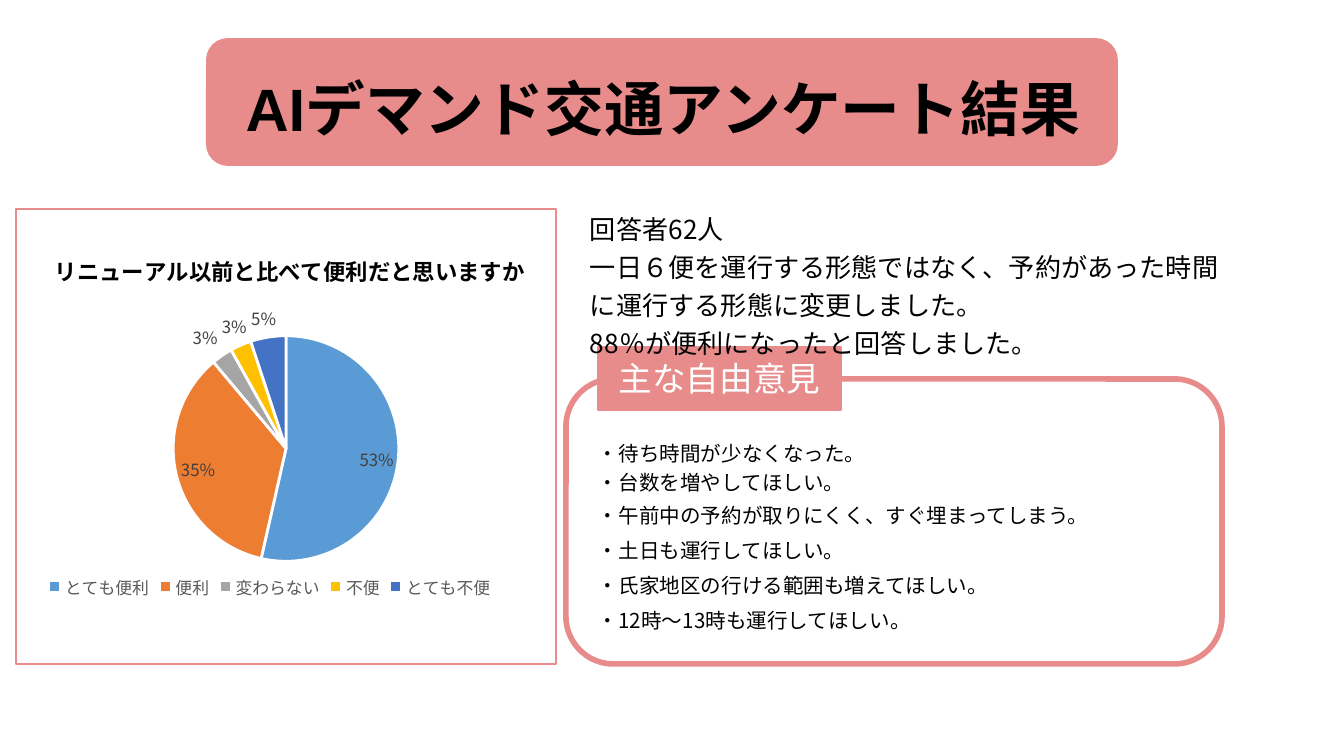
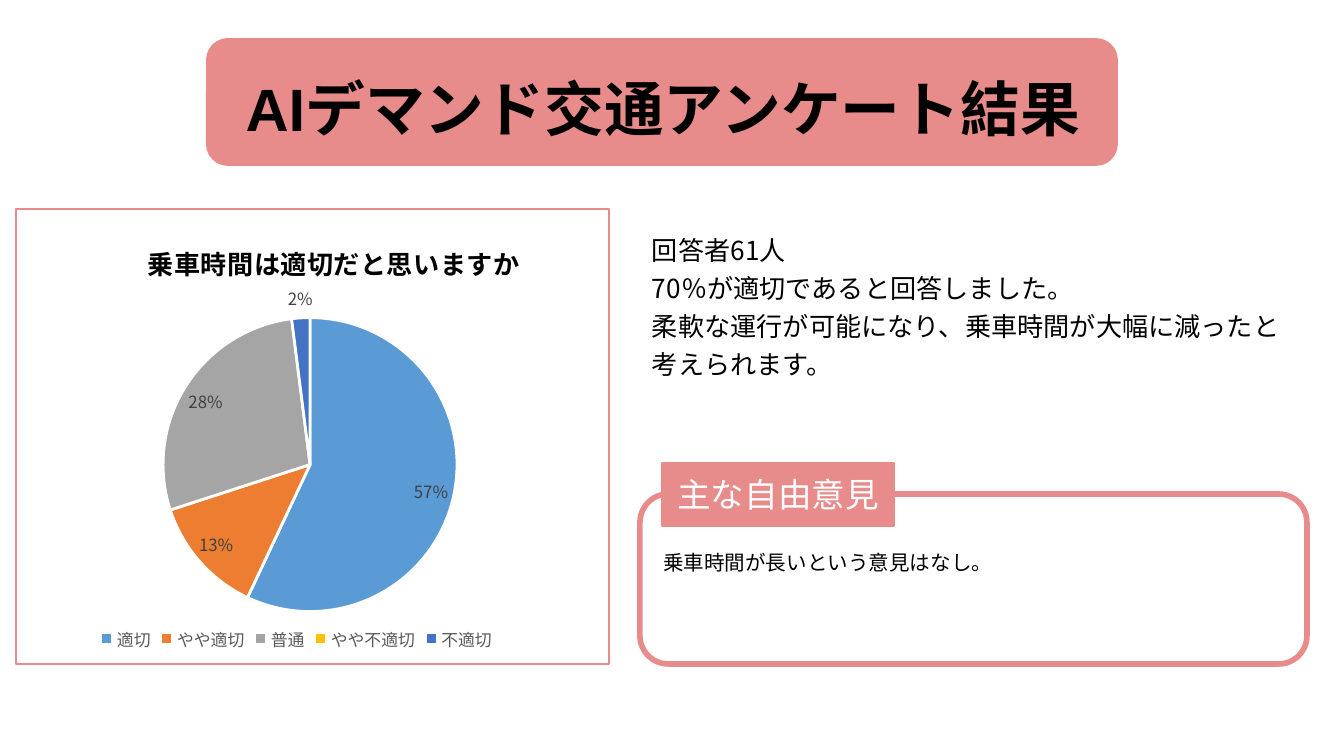
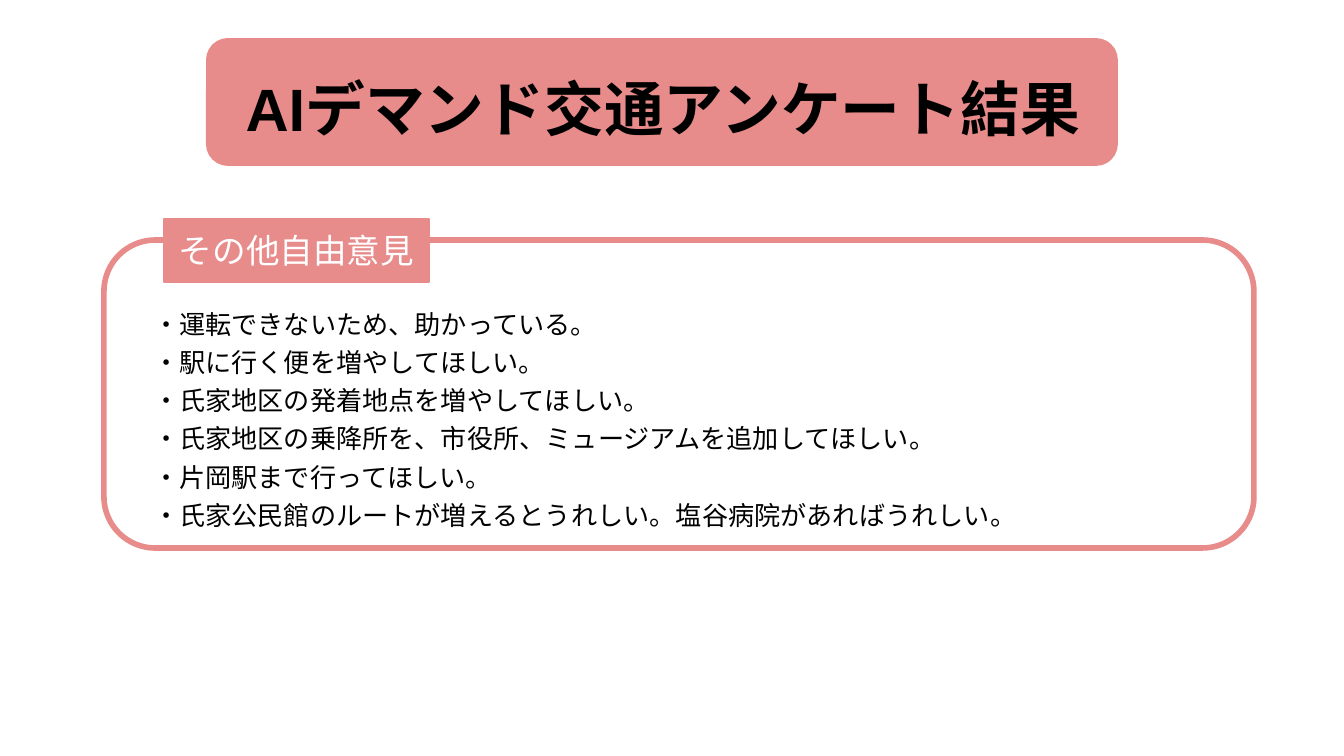
"""Builds three slides that report the results of a survey on AI demand transport."""
from lxml import etree
from pptx import Presentation
from pptx.chart.data import CategoryChartData
from pptx.dml.color import RGBColor
from pptx.enum.chart import XL_CHART_TYPE, XL_LABEL_POSITION, XL_LEGEND_POSITION
from pptx.enum.shapes import MSO_SHAPE
from pptx.enum.text import MSO_ANCHOR, PP_ALIGN
from pptx.oxml.ns import qn
from pptx.util import Pt

PIE = XL_CHART_TYPE.PIE
BEST_FIT = XL_LABEL_POSITION.BEST_FIT
BOTTOM = XL_LEGEND_POSITION.BOTTOM
RECT, ROUNDED = MSO_SHAPE.RECTANGLE, MSO_SHAPE.ROUNDED_RECTANGLE
MIDDLE, CENTER = MSO_ANCHOR.MIDDLE, PP_ALIGN.CENTER

EMU_PER_PX = 914400 / 134.4
SLIDE_W, SLIDE_H = 1344, 756
BODY_FONT, TITLE_FONT = "Noto Sans CJK JP", "Arial"
PINK, BLACK, WHITE, LEGEND_GREY, LABEL_GREY = "E78B8B", "000000", "FFFFFF", "595959", "404040"
SLICE_COLORS = ["5B9BD5", "ED7D31", "A5A5A5", "FFC000", "4472C4"]
NO_GRID_STYLE = "{2D5ABB26-0587-4C30-8999-92F81FD0307C}"

TITLE = "AIデマンド交通アンケート結果"
BAND_AT = (207, 39, 910, 126)
TITLE_AT = (58, 34, 1210, 148)

SLIDES = [
    {
        "opinions": {
            "at": (598, 437, 632, 239), "size": 11, "heights": [35] * 6,
            "rows": [
                ["・待ち時間が少なくなった。", "・台数を増やしてほしい。"],
                ["・午前中の予約が取りにくく、すぐ埋まってしまう。"],
                ["・土日も運行してほしい。"],
                ["・氏家地区の行ける範囲も増えてほしい。"],
                ["・12時～13時も運行してほしい。"],
                [],
            ],
        },
        "box": (566, 379, 656, 285),
        "label": ("主な自由意見", (598, 347, 243, 63)),
        "chart_frame": (16, 209, 540, 455),
        "summary": {
            "at": (590, 209, 632, 313), "size": 14, "heights": [10] * 6,
            "rows": [
                ["回答者62人",
                 "一日６便を運行する形態ではなく、予約があった時間に運行する形態に変更しました。",
                 "88％が便利になったと回答しました。"],
                [], [], [], [], [],
            ],
        },
        "chart": {
            "at": (-50, 223, 672, 403),
            "question": "リニューアル以前と比べて便利だと思いますか", "size": 12,
            "answers": [("とても便利", 0.53), ("便利", 0.35), ("変わらない", 0.03),
                        ("不便", 0.03), ("とても不便", 0.05)],
            "title": (0.15, 0.06), "pie": (0.33, 0.28, 0.34, 0.56), "legend": (0.14, 0.86),
        },
    },
    {
        "opinions": {
            "at": (663, 546, 644, 231), "size": 11, "heights": [28] + [16] * 5,
            "rows": [["乗車時間が長いという意見はなし。"], [], [], [], [], []],
        },
        "box": (640, 494, 667, 170),
        "label": ("主な自由意見", (662, 463, 232, 63)),
        "chart_frame": (16, 209, 593, 455),
        "summary": {
            "at": (652, 230, 632, 313), "size": 14, "heights": [67, 21, 21, 21, 24, 13],
            "rows": [
                ["回答者61人",
                 "70％が適切であると回答しました。",
                 "柔軟な運行が可能になり、乗車時間が大幅に減ったと考えられます。"],
                [], [], [], [], [],
            ],
        },
        "chart": {
            "at": (20, 202, 586, 482),
            "question": "乗車時間は適切だと思いますか", "size": 14,
            "answers": [("適切", 0.57), ("やや適切", 0.13), ("普通", 0.28),
                        ("やや不適切", 0), ("不適切", 0.02)],
            "title": (0.21, 0.07), "pie": (0.24, 0.24, 0.51, 0.61), "legend": (0.13, 0.87),
        },
    },
    {
        "opinions": {
            "at": (153, 304, 931, 233), "size": 14, "heights": [9, 11, 35, 11, 31, 9, 9],
            "rows": [
                ["・運転できないため、助かっている。"],
                ["・駅に行く便を増やしてほしい。"],
                ["・氏家地区の発着地点を増やしてほしい。"],
                ["・氏家地区の乗降所を、市役所、ミュージアムを追加してほしい。"],
                ["・片岡駅まで行ってほしい。"],
                ["・氏家公民館のルートが増えるとうれしい。塩谷病院があればうれしい。"],
                [],
            ],
        },
        "box": (104, 240, 1150, 308),
        "label": ("その他自由意見", (164, 219, 265, 63)),
    },
]


def px(length):
    return round(length * EMU_PER_PX)


def place(at):
    return [px(length) for length in at]


def rgb(color):
    return RGBColor.from_string(color)


def style_font(font, size, color, name=BODY_FONT, bold=False):
    font.size, font.bold, font.name = Pt(size), bold, name
    font.color.rgb = rgb(color)


def add_text(paragraph, text, size, color, name=BODY_FONT, bold=False):
    run = paragraph.add_run()
    run.text = text
    style_font(run.font, size, color, name, bold)
    east_asian = etree.SubElement(run.font._element, qn("a:ea"))
    east_asian.set("typeface", BODY_FONT)


def add_outline(slide, preset, at, line_width, fill=None):
    shape = slide.shapes.add_shape(preset, *place(at))
    shape.shadow.inherit = False
    if fill:
        shape.fill.solid()
        shape.fill.fore_color.rgb = rgb(fill)
    else:
        shape.fill.background()
    shape.line.color.rgb = rgb(PINK)
    shape.line.width = Pt(line_width)
    return shape


def add_title(slide):
    band = add_outline(slide, ROUNDED, BAND_AT, 1, PINK)
    title = slide.shapes.title
    title._element.addprevious(band._element)
    title.left, title.top, title.width, title.height = place(TITLE_AT)
    title.text_frame.vertical_anchor = MIDDLE
    heading = title.text_frame.paragraphs[0]
    heading.alignment = CENTER
    add_text(heading, TITLE, 32, BLACK, TITLE_FONT, True)


def add_label(slide, text, at):
    frame = add_outline(slide, RECT, at, 1, PINK).text_frame
    frame.vertical_anchor = MIDDLE
    frame.paragraphs[0].alignment = CENTER
    add_text(frame.paragraphs[0], text, 18, WHITE)


def add_comments(slide, comments):
    rows, size = comments["rows"], comments["size"]
    holder = slide.shapes.add_table(len(rows), 1, *place(comments["at"]))
    table = holder.table
    table.first_row = table.horz_banding = False
    table._tbl.tblPr.find(qn("a:tableStyleId")).text = NO_GRID_STYLE
    for row, height, lines in zip(table.rows, comments["heights"], rows):
        row.height = px(height)
        cell = row.cells[0]
        cell.fill.background()
        cell.vertical_anchor = MIDDLE
        cell.margin_left = cell.margin_right = cell.margin_top = cell.margin_bottom = 0
        frame = cell.text_frame
        for index, line in enumerate(lines):
            paragraph = frame.add_paragraph() if index else frame.paragraphs[0]
            add_text(paragraph, line, size, BLACK)
        if not lines:
            end = etree.SubElement(frame.paragraphs[0]._p, qn("a:endParaRPr"))
            end.set("sz", str(size * 100))
    holder.height = px(comments["at"][3])


def set_layout(part, index, position):
    """Place a chart part at fractions of the chart area."""
    for old in part.findall(qn("c:layout")):
        part.remove(old)
    layout = etree.Element(qn("c:layout"))
    manual = etree.SubElement(layout, qn("c:manualLayout"))
    settings = [("layoutTarget", "inner")] if len(position) == 4 else []
    settings += [("xMode", "edge"), ("yMode", "edge"), *zip("xywh", position)]
    for tag, value in settings:
        etree.SubElement(manual, qn("c:" + tag)).set("val", str(value))
    part.insert(index, layout)


def add_pie(slide, survey):
    data = CategoryChartData(number_format="0%")
    data.categories = [answer for answer, _ in survey["answers"]]
    data.add_series("Series 1", [share for _, share in survey["answers"]])
    chart = slide.shapes.add_chart(PIE, *place(survey["at"]), data).chart
    style_font(chart.font, 10, BLACK)
    chart.has_title = True
    add_text(chart.chart_title.text_frame.paragraphs[0], survey["question"],
             survey["size"], BLACK, bold=True)
    chart.has_legend = True
    chart.legend.position = BOTTOM
    chart.legend.include_in_layout = False
    style_font(chart.legend.font, 9, LEGEND_GREY)

    plot = chart.plots[0]
    plot.vary_by_categories = True
    for index, color in enumerate(SLICE_COLORS):
        slice_format = plot.series[0].points[index].format
        slice_format.fill.solid()
        slice_format.fill.fore_color.rgb = rgb(color)
        slice_format.line.color.rgb = rgb(WHITE)
        slice_format.line.width = Pt(1.5)
    labels = plot.series[0].data_labels
    labels.show_value = True
    labels.number_format, labels.number_format_is_linked = "0%", False
    labels.position = BEST_FIT
    style_font(labels.font, 9, LABEL_GREY)

    body = chart._chartSpace.find(qn("c:chart"))
    set_layout(body.find(qn("c:title")), 1, survey["title"])
    set_layout(body.find(qn("c:plotArea")), 0, survey["pie"])
    set_layout(body.find(qn("c:legend")), 1, survey["legend"])
    backdrop = etree.Element(qn("c:spPr"))
    etree.SubElement(backdrop, qn("a:noFill"))
    etree.SubElement(etree.SubElement(backdrop, qn("a:ln")), qn("a:noFill"))
    body.addnext(backdrop)


def main():
    deck = Presentation()
    deck.slide_width, deck.slide_height = px(SLIDE_W), px(SLIDE_H)
    for content in SLIDES:
        slide = deck.slides.add_slide(deck.slide_layouts[5])
        add_title(slide)
        add_comments(slide, content["opinions"])
        add_outline(slide, ROUNDED, content["box"], 3)
        add_label(slide, *content["label"])
        if "chart" in content:
            add_outline(slide, RECT, content["chart_frame"], 1)
            add_comments(slide, content["summary"])
            add_pie(slide, content["chart"])
    deck.save("out.pptx")


if __name__ == "__main__":
    main()
